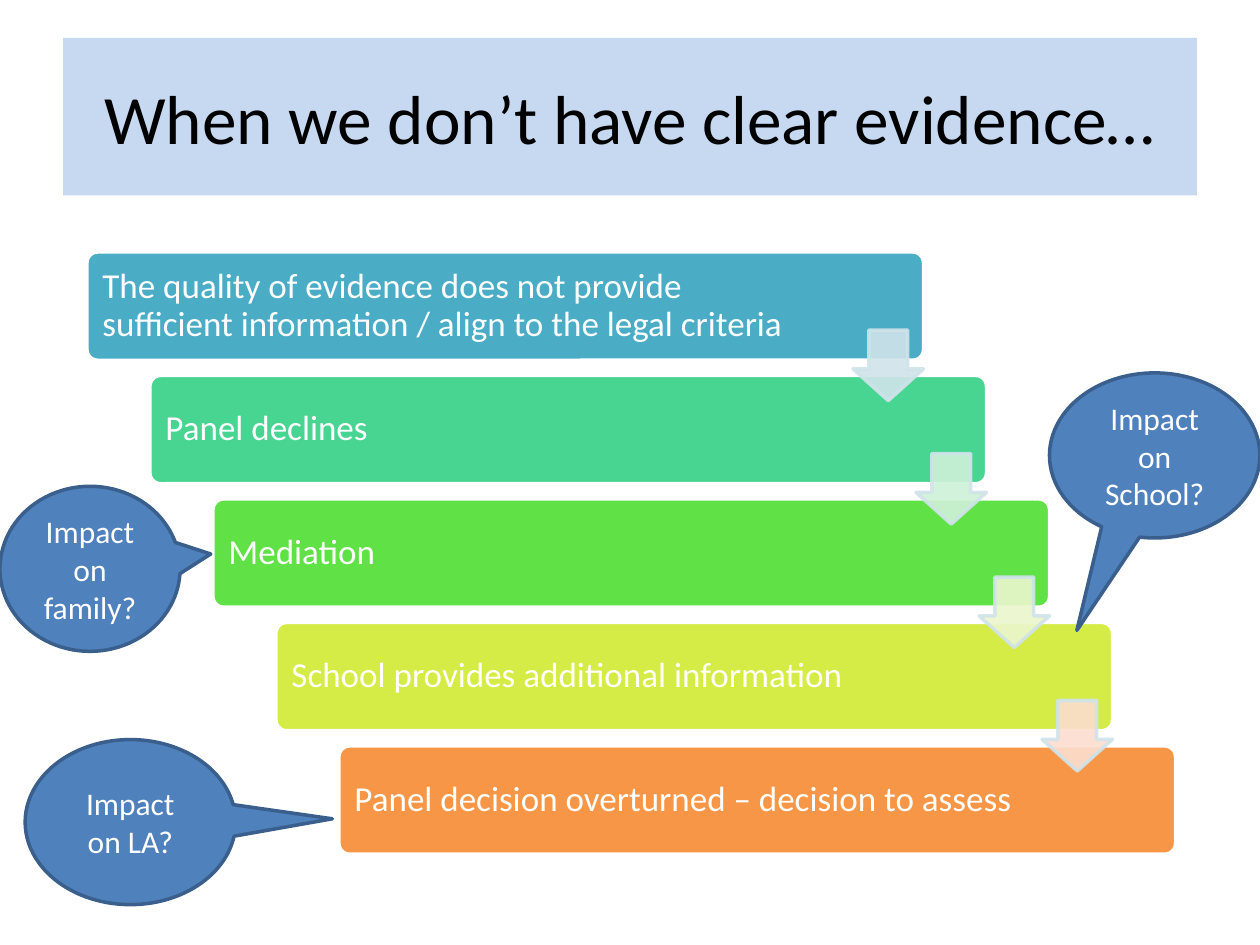
import pptx
import pptx.util
import pptx.dml.color
import pptx.enum.shapes
import pptx.enum.text
import pptx.oxml.ns
import lxml.etree

Inches, Pt = pptx.util.Inches, pptx.util.Pt
KIND = pptx.enum.shapes.MSO_SHAPE
ALIGN = pptx.enum.text.PP_ALIGN

COLORS = {
    "band": "C6D9F1", "black": "000000", "white": "FFFFFF",
    "edge": "D0E3EA", "bubble": "4F81BD", "rim": "3A5F8C",
}
STEPS = [
    ("The quality of evidence does not provide sufficient information "
     "/ align to the legal criteria", "4BACC6"),
    ("Panel declines", "48D491"),
    ("Mediation", "60E146"),
    ("School provides additional information", "D5EC46"),
    ("Panel decision overturned – decision to assess", "F79646"),
]
ARROWS = ["D0E3EA", "CFF1D9", "EBF7CE", "FCDDCF"]
# text, left, top, width, pointer position
BUBBLES = [
    ("Impact on family?", 0, 3.86, 1.43, (0.67, -0.09)),
    ("Impact on LA?", 0.2, 5.87, 1.67, (0.96, -0.02)),
    ("Impact on School?", 8.33, 2.96, 1.67, (-0.37, 1.06)),
]
STEP_X, STEP_Y = 0.5, 0.98


def paint(fill, color, alpha=None):
    fill.solid()
    fill.fore_color.rgb = pptx.dml.color.RGBColor.from_string(color)
    if alpha:
        tone = fill._xPr.find(".//" + pptx.oxml.ns.qn("a:srgbClr"))
        tag = pptx.oxml.ns.qn("a:alpha")
        lxml.etree.SubElement(tone, tag).set("val", str(alpha * 1000))


def write(shape, text, size, color, align):
    frame = shape.text_frame
    frame.word_wrap = True
    frame.auto_size = pptx.enum.text.MSO_AUTO_SIZE.NONE
    frame.vertical_anchor = pptx.enum.text.MSO_ANCHOR.MIDDLE
    para = frame.paragraphs[0]
    para.alignment = align
    run = para.add_run()
    run.text = text
    run.font.name = "Calibri"
    run.font.size = Pt(size)
    run.font.color.rgb = pptx.dml.color.RGBColor.from_string(color)
    return frame


def add_shape(slide, kind, box, adjust, fill, line, alpha=None):
    shape = slide.shapes.add_shape(kind, *map(Inches, box))
    shape.shadow.inherit = False
    for i, value in enumerate(adjust):
        shape.adjustments[i] = value
    paint(shape.fill, fill, alpha)
    paint(shape.line.fill, line, alpha)
    shape.line.width = Pt(2)
    return shape


def add_title(slide, text):
    title = slide.shapes.title
    title.left, title.top = Inches(0.5), Inches(0.3)
    title.width, title.height = Inches(9), Inches(1.25)
    paint(title.fill, COLORS["band"])
    write(title, text, 39.6, COLORS["black"], ALIGN.CENTER)


def add_step(slide, i, text, color):
    box = (0.69 + i * STEP_X, 2 + i * STEP_Y, 6.64, 0.86)
    bar = add_shape(slide, KIND.ROUNDED_RECTANGLE, box, [0.1],
                    color, COLORS["white"])
    frame = write(bar, text, 20, COLORS["white"], ALIGN.LEFT)
    frame.margin_left, frame.margin_right = Inches(0.1), Inches(1.08)
    frame.paragraphs[0].line_spacing = 0.9


def add_arrow(slide, i, color):
    box = (6.77 + i * STEP_X, 2.62 + i * STEP_Y, 0.56, 0.56)
    add_shape(slide, KIND.DOWN_ARROW, box, [0.55, 0.45],
              color, COLORS["edge"], 90)


def add_bubble(slide, text, left, top, width, tip):
    bubble = add_shape(slide, KIND.OVAL_CALLOUT, (left, top, width, 1.31),
                       tip, COLORS["bubble"], COLORS["rim"])
    write(bubble, text, 18, COLORS["white"], ALIGN.CENTER)


def main():
    deck = pptx.Presentation()
    deck.slide_width, deck.slide_height = Inches(10), Inches(7.5)
    slide = deck.slides.add_slide(deck.slide_layouts[5])
    add_title(slide, "When we don’t have clear evidence…")

    # Staircase of steps, then the arrows on top of it
    for i, (text, color) in enumerate(STEPS):
        add_step(slide, i, text, color)
    for i, color in enumerate(ARROWS):
        add_arrow(slide, i, color)

    # Speech bubbles
    for bubble in BUBBLES:
        add_bubble(slide, *bubble)

    deck.save("out.pptx")


if __name__ == "__main__":
    main()
